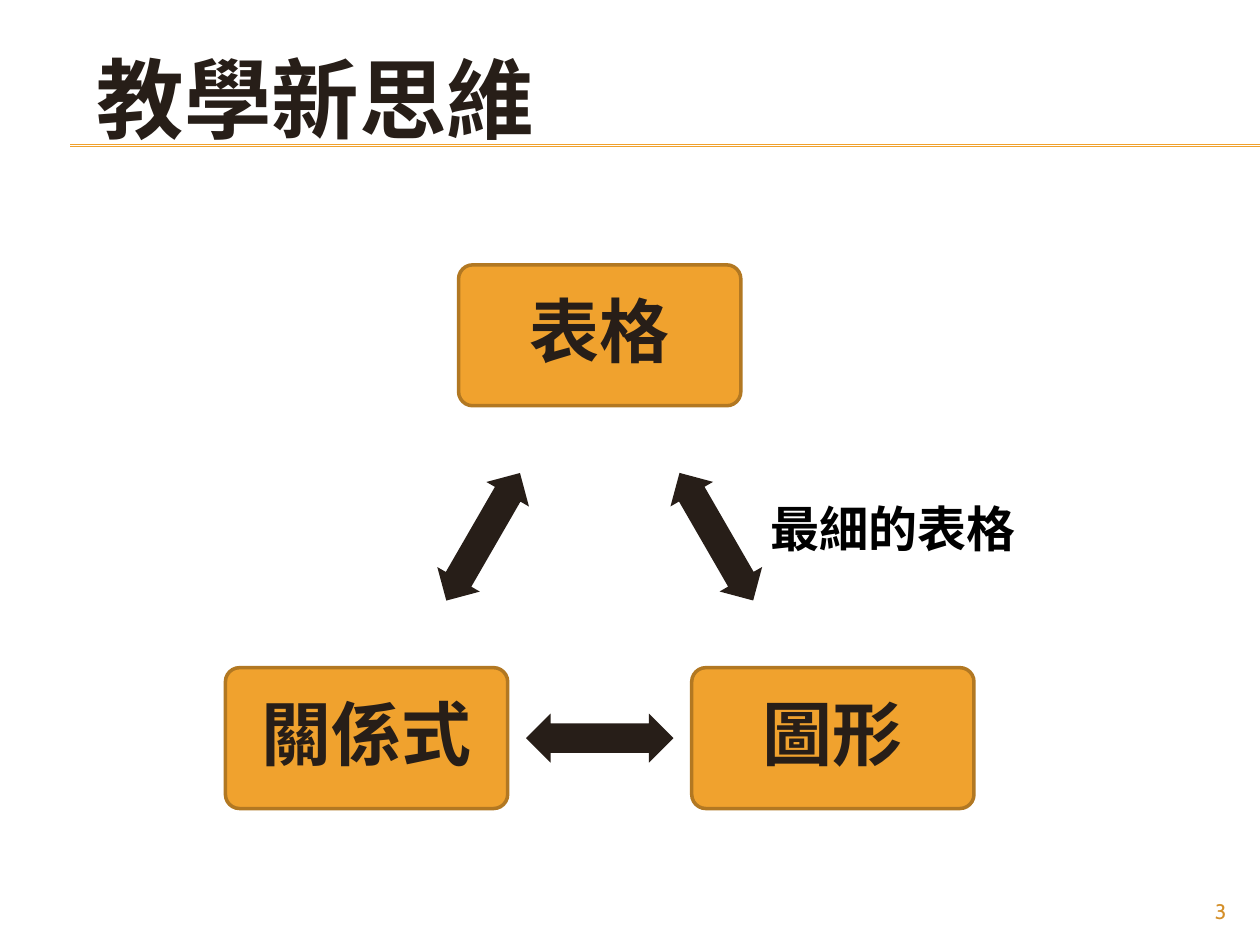
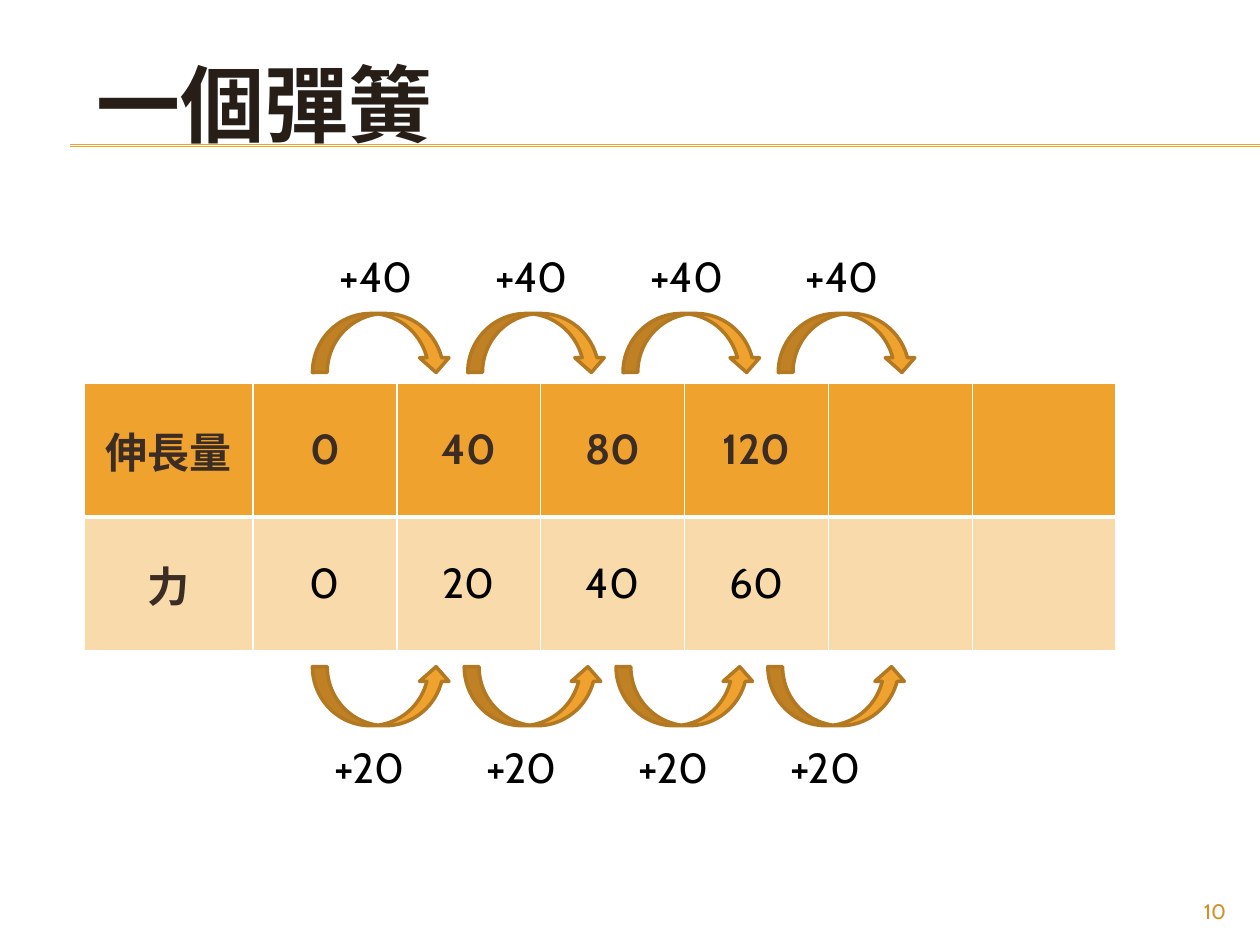
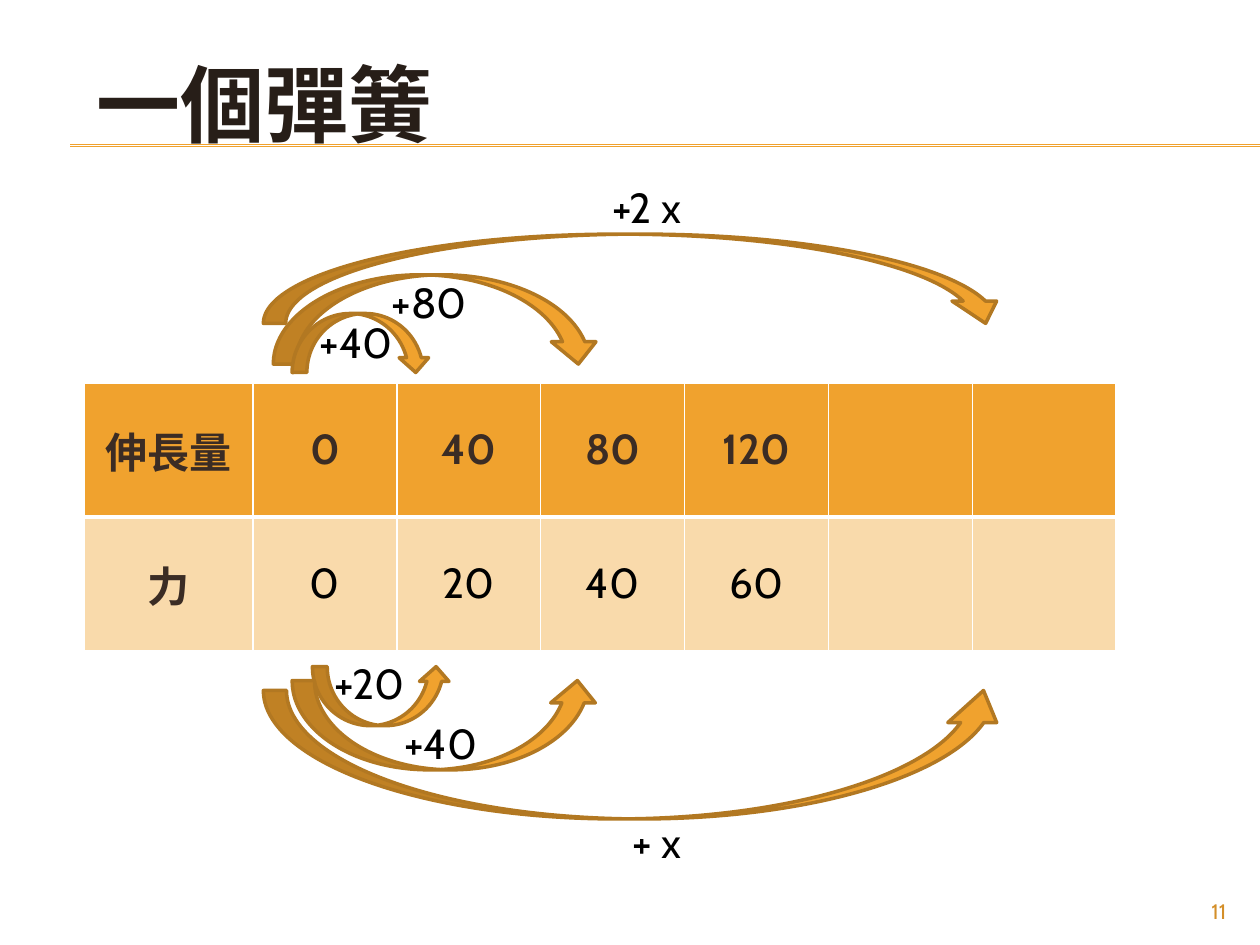
from lxml import etree
from pptx import Presentation
from pptx.dml.color import RGBColor
from pptx.enum.shapes import MSO_CONNECTOR, MSO_SHAPE
from pptx.enum.text import MSO_ANCHOR, MSO_AUTO_SIZE, PP_ALIGN
from pptx.oxml.ns import qn
from pptx.util import Cm, Pt

STRAIGHT = MSO_CONNECTOR.STRAIGHT
ROUNDED = MSO_SHAPE.ROUNDED_RECTANGLE
TWO_WAY = MSO_SHAPE.LEFT_RIGHT_ARROW
CURVED_DOWN = MSO_SHAPE.CURVED_DOWN_ARROW
CURVED_UP = MSO_SHAPE.CURVED_UP_ARROW
LEFT, CENTER, RIGHT = PP_ALIGN.LEFT, PP_ALIGN.CENTER, PP_ALIGN.RIGHT
TOP, MIDDLE = MSO_ANCHOR.TOP, MSO_ANCHOR.MIDDLE
FIT_SHAPE = MSO_AUTO_SIZE.SHAPE_TO_FIT_TEXT

ORANGE = RGBColor(0xF0, 0xA2, 0x2E)
PALE_ORANGE = RGBColor(0xF9, 0xDA, 0xAB)
DARK_ORANGE = RGBColor(0xB2, 0x78, 0x22)
NUMBER_ORANGE = RGBColor(0xD4, 0x8F, 0x29)
DARK_BROWN = RGBColor(0x27, 0x1E, 0x18)
BROWN = RGBColor(0x3B, 0x2C, 0x24)
BLACK = RGBColor(0, 0, 0)
WHITE = RGBColor(0xFF, 0xFF, 0xFF)

LATIN_FONT = "Cabin"
CHINESE_FONT = "Noto Sans CJK SC"

SPRING_ROWS = [
    ["伸長量", "0", "40", "80", "120", "", ""],
    ["力", "0", "20", "40", "60", "", ""],
]


def write_text(frame, text, size=24, color=BLACK, bold=False, font=LATIN_FONT,
               align=LEFT, line_spacing=None):
    para = frame.paragraphs[0]
    para.alignment = align
    para.line_spacing = line_spacing
    span = para.add_run()
    span.text = text
    span.font.size = Pt(size)
    span.font.bold = bold
    span.font.color.rgb = color
    span.font.name = font
    east_asian = etree.SubElement(span._r.get_or_add_rPr(), qn("a:ea"))
    east_asian.set("typeface", CHINESE_FONT)


def add_borders(cell, **widths):
    """Draw white cell edges; widths maps lnL, lnR, lnT and lnB to points."""
    properties = cell._tc.get_or_add_tcPr()
    for edge, width in widths.items():
        line = etree.SubElement(properties, qn(f"a:{edge}"), w=str(Pt(width)))
        fill = etree.SubElement(line, qn("a:solidFill"))
        etree.SubElement(fill, qn("a:srgbClr"), val=str(WHITE))


class Lesson:
    """Holds the deck and its current page; all lengths are centimetres."""

    def __init__(self):
        self.deck = Presentation()
        self.deck.slide_width, self.deck.slide_height = Cm(25.4), Cm(19.05)
        self.page = None

    def new_page(self, title, number, top=0.91, **title_format):
        self.page = self.deck.slides.add_slide(self.deck.slide_layouts[6])
        for y in (2.92, 2.95):
            self.rule(1.42, 25.4, y)
        style = {"size": 48, "font": CHINESE_FONT, "color": DARK_BROWN, "bold": True}
        self.text(title, 1.7, top, 23.27, 2.34, anchor=MIDDLE, **(style | title_format))
        self.text(str(number), 22.86, 17.98, 2.11, 0.69, size=12,
                  color=NUMBER_ORANGE, align=RIGHT)

    def rule(self, start, end, y):
        line = self.page.shapes.add_connector(STRAIGHT, Cm(start), Cm(y), Cm(end), Cm(y))
        line.line.color.rgb = ORANGE
        line.line.width = Pt(0.75)
        etree.SubElement(line._element.spPr, qn("a:effectLst"))

    def text(self, text, left, top, width, height, anchor=TOP, grow=False, **text_format):
        box = self.page.shapes.add_textbox(Cm(left), Cm(top), Cm(width), Cm(height))
        frame = box.text_frame
        frame.word_wrap = True
        frame.vertical_anchor = anchor
        if grow:
            frame.auto_size = FIT_SHAPE
        write_text(frame, text, **text_format)

    def shape(self, kind, left, top, width, height, fill=ORANGE, outline=DARK_ORANGE,
              adjustments=(), rotation=0):
        shape = self.page.shapes.add_shape(kind, Cm(left), Cm(top), Cm(width), Cm(height))
        shape.shadow.inherit = False
        shape.rotation = rotation
        shape.fill.solid()
        shape.fill.fore_color.rgb = fill
        if outline is None:
            shape.line.fill.background()
        else:
            shape.line.color.rgb = outline
            shape.line.width = Pt(2)
        for index, value in enumerate(adjustments):
            shape.adjustments[index] = value
        return shape

    def node(self, text, center, width=5.69, height=2.84):
        x, y = center
        node = self.shape(ROUNDED, x - width / 2, y - height / 2, width, height,
                          adjustments=[0.1])
        frame = node.text_frame
        frame.word_wrap = True
        frame.vertical_anchor = MIDDLE
        frame.margin_left = frame.margin_right = Cm(0.43)
        frame.margin_top = frame.margin_bottom = Cm(0.43)
        write_text(frame, text, size=40, color=DARK_BROWN, bold=True,
                   font=CHINESE_FONT, align=CENTER, line_spacing=0.9)

    def arrow_between(self, start, end, rotation, width=2.97, height=0.99):
        x, y = (start[0] + end[0]) / 2, (start[1] + end[1]) / 2
        self.shape(TWO_WAY, x - width / 2, y - height / 2, width, height, rotation=rotation,
                   fill=DARK_BROWN, outline=None, adjustments=[0.6, 0.5])

    def step(self, kind, text, arrow, label, adjustments=()):
        """Add a curved arrow (left, top, width, height) and its label (left, top)."""
        self.shape(kind, *arrow, adjustments=adjustments)
        self.text(text, *label, 2.35, 1.27, grow=True)

    def spring_table(self):
        widths = [3.4] + [2.9] * 6
        row_height = 2.7
        frame = self.page.shapes.add_table(
            len(SPRING_ROWS), len(widths), Cm(1.7), Cm(7.72),
            Cm(sum(widths)), Cm(row_height * len(SPRING_ROWS)))
        table = frame.table
        table.horz_banding = False
        for column, width in zip(table.columns, widths):
            column.width = Cm(width)
        for row_index, values in enumerate(SPRING_ROWS):
            table.rows[row_index].height = Cm(row_height)
            header = row_index == 0
            for column_index, value in enumerate(values):
                cell = table.cell(row_index, column_index)
                add_borders(cell, lnL=1, lnR=1, lnT=1 if header else 3,
                            lnB=3 if header else 1)
                cell.fill.solid()
                cell.fill.fore_color.rgb = ORANGE if header else PALE_ORANGE
                cell.vertical_anchor = MIDDLE
                if value:
                    strong = header or column_index == 0
                    write_text(cell.text_frame, value, bold=strong, align=CENTER,
                               color=BROWN if strong else BLACK)


def build_triangle(lesson):
    lesson.new_page("教學新思維", 3, top=0.79, size=50, font=LATIN_FONT)
    table, graph, formula = (12.09, 6.76), (16.79, 14.88), (7.39, 14.88)
    for text, center in (("表格", table), ("圖形", graph), ("關係式", formula)):
        lesson.node(text, center)
    lesson.arrow_between(table, graph, 60)
    lesson.arrow_between(graph, formula, 180)
    lesson.arrow_between(formula, table, 300)
    lesson.text("最細的表格", 15.29, 9.93, 5.79, 1.45, grow=True, size=28, bold=True)


def build_equal_steps(lesson):
    lesson.new_page("一個彈簧", 10)
    lesson.spring_table()
    for kind, text, pitch, arrow_top, label_shift, label_top in (
            (CURVED_DOWN, "+40", 3.13, 6.32, 0.3, 4.93),
            (CURVED_UP, "+20", 3.06, 13.44, 0.2, 14.83)):
        for index in range(4):
            left = 6.3 + index * pitch
            lesson.step(kind, text, (left, arrow_top, 2.79, 1.19),
                        (left + label_shift, label_top))


def build_growing_steps(lesson):
    lesson.new_page("一個彈簧", 11)
    lesson.spring_table()
    lesson.step(CURVED_DOWN, "+80", (5.51, 5.54, 6.6, 1.8), (7.65, 5.44))
    lesson.step(CURVED_DOWN, "+40", (5.89, 6.32, 2.79, 1.19), (6.2, 6.25))
    lesson.step(CURVED_DOWN, "+2 x", (5.31, 4.72, 15.01, 1.8), (12.09, 3.53))
    lesson.step(CURVED_UP, "+20", (6.3, 13.44, 2.79, 1.19), (6.5, 13.13))
    lesson.step(CURVED_UP, "+40", (5.89, 13.72, 6.2, 1.8), (7.9, 14.33))
    lesson.step(CURVED_UP, "+ x", (5.31, 13.92, 15.01, 2.59), (12.5, 16.33),
                adjustments=[0.18, 0.38, 0.25])


def main():
    lesson = Lesson()
    build_triangle(lesson)
    build_equal_steps(lesson)
    build_growing_steps(lesson)
    lesson.deck.save("out.pptx")


if __name__ == "__main__":
    main()
